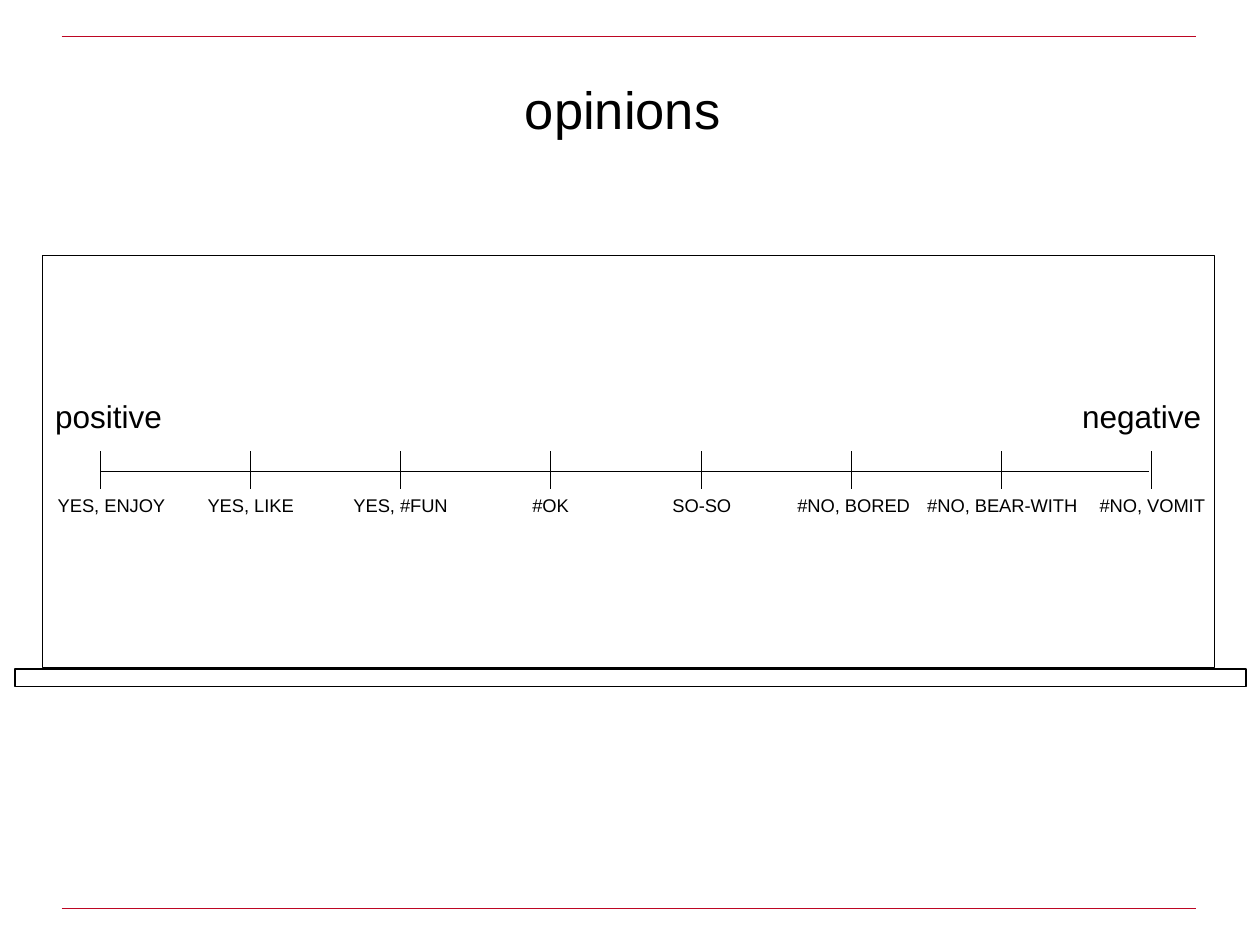
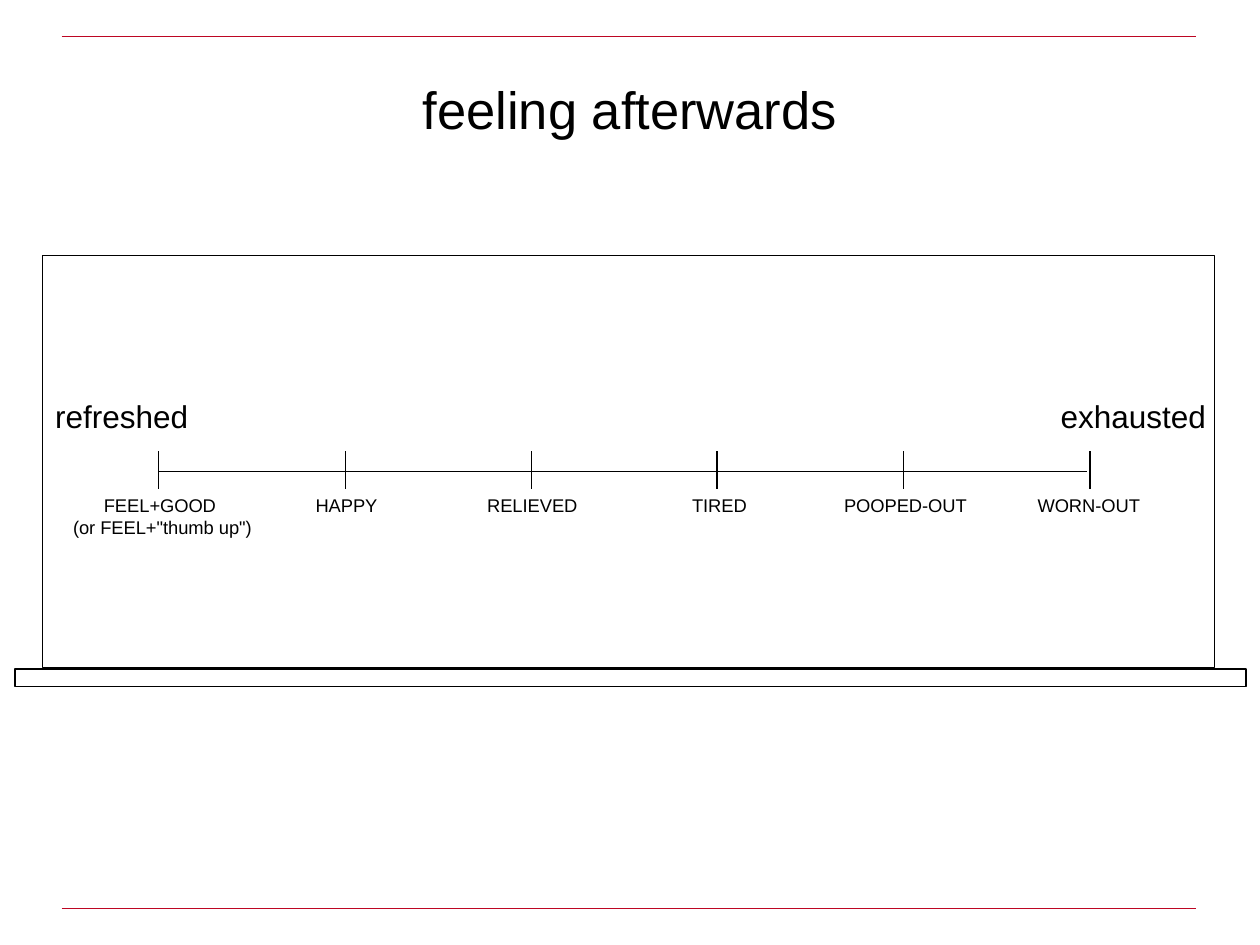
from dataclasses import dataclass

from lxml import etree
from pptx import Presentation
from pptx import util as u
from pptx.dml.color import RGBColor
from pptx.enum import shapes, text
from pptx.oxml import ns

# Shared look: 100 px to the inch
PX = 9144
FONT = "Arial"
BLACK = RGBColor(0x00, 0x00, 0x00)
RED = RGBColor(0xBD, 0x06, 0x23)
LEFT, MID = text.PP_ALIGN.LEFT, text.PP_ALIGN.CENTER

# Heights on the board
END_Y, TICK_Y, AXIS_Y, MARK_Y = 310, 358, 374, 387
TICK_H = 30


@dataclass
class Box:
    x: int
    y: int
    w: int
    h: int

    def emu(self) -> list[int]:
        return [v * PX for v in (self.x, self.y, self.w, self.h)]


@dataclass
class Mark:
    words: str
    wide: int
    shift: int = 0
    high: int = 28


@dataclass
class End:
    words: str
    x: int
    wide: int


@dataclass
class Scale:
    title: str
    first: int
    last: int
    ends: list[End]
    marks: list[Mark]


RULES = (29, 721)
TITLE = Box(50, 33, 900, 106)
BOARD = [Box(34, 203, 930, 327), Box(12, 531, 977, 14)]

SCALES = [
    Scale("opinions ", 80, 914,
          [End("positive", 34, 106), End("negative", 849, 116)],
          [Mark("YES, ENJOY", 109, 8), Mark("YES, LIKE", 90),
           Mark("YES, #FUN ", 96), Mark("#OK ", 50), Mark("SO-SO ", 68),
           Mark("#NO, BORED", 111, 1), Mark("#NO, BEAR-WITH", 141),
           Mark("#NO, VOMIT", 105)]),
    Scale("feeling afterwards", 126, 865,
          [End("refreshed", 34, 127), End("exhausted", 832, 137)],
          [Mark('FEEL+GOOD \n(or FEEL+"thumb up") ', 164, 3, 45),
           Mark("HAPPY", 72, 1), Mark("RELIEVED ", 93),
           Mark("TIRED ", 64, 2), Mark("POOPED-OUT ", 119, 1),
           Mark("WORN-OUT ", 104, -1)]),
]


def line(slide, x: int, y: int, w: int, h: int,
         tint: RGBColor = BLACK, thick: float = 0.75) -> None:
    rule = slide.shapes.add_connector(
        shapes.MSO_CONNECTOR.STRAIGHT,
        x * PX, y * PX, (x + w) * PX, (y + h) * PX)
    rule.line.color.rgb = tint
    rule.line.width = u.Pt(thick)
    etree.SubElement(rule._element.spPr, ns.qn("a:effectLst"))


def write(frame, words: str, size: float, align) -> None:
    para = frame.paragraphs[0]
    para.alignment = align
    for i, part in enumerate(words.split("\n")):
        if i:
            para.add_line_break()
        run = para.add_run()
        run.text = part
        run.font.name = FONT
        run.font.size = u.Pt(size)
        run.font.color.rgb = BLACK


def label(slide, box: Box, words: str, size: float, align) -> None:
    frame = slide.shapes.add_textbox(*box.emu()).text_frame
    frame.word_wrap = False
    frame.auto_size = text.MSO_AUTO_SIZE.SHAPE_TO_FIT_TEXT
    write(frame, words, size, align)


def head(slide, words: str) -> None:
    title = slide.shapes.title
    title.left, title.top, title.width, title.height = TITLE.emu()
    title.text_frame.vertical_anchor = text.MSO_ANCHOR.MIDDLE
    write(title.text_frame, words, 30, MID)


def board(slide) -> None:
    group = slide.shapes.add_group_shape()
    for box in BOARD:
        part = group.shapes.add_shape(
            shapes.MSO_SHAPE.RECTANGLE, *box.emu())
        part.shadow.inherit = False
        part.fill.background()
        part.line.color.rgb = BLACK
        part.line.width = u.Pt(0.75)


def draw(deck, scale: Scale) -> None:
    slide = deck.slides.add_slide(deck.slide_layouts[5])
    for y in RULES:
        line(slide, 49, y, 900, 0, RED, 1)
    head(slide, scale.title)
    board(slide)

    # Axis and the words at its ends
    span = scale.last - scale.first
    line(slide, scale.first, AXIS_Y, span - 2, 0)
    for end in scale.ends:
        label(slide, Box(end.x, END_Y, end.wide, 40), end.words, 18, LEFT)

    # Evenly spaced ticks, each with its label centred below
    step = span / (len(scale.marks) - 1)
    for i, mark in enumerate(scale.marks):
        x = round(scale.first + i * step)
        line(slide, x, TICK_Y, 0, TICK_H)
        left = x + mark.shift - mark.wide // 2
        label(slide, Box(left, MARK_Y, mark.wide, mark.high),
              mark.words, 10.5, MID)


def main() -> None:
    deck = Presentation()
    deck.slide_width, deck.slide_height = 1000 * PX, 750 * PX
    for scale in SCALES:
        draw(deck, scale)
    deck.save("out.pptx")


if __name__ == "__main__":
    main()
